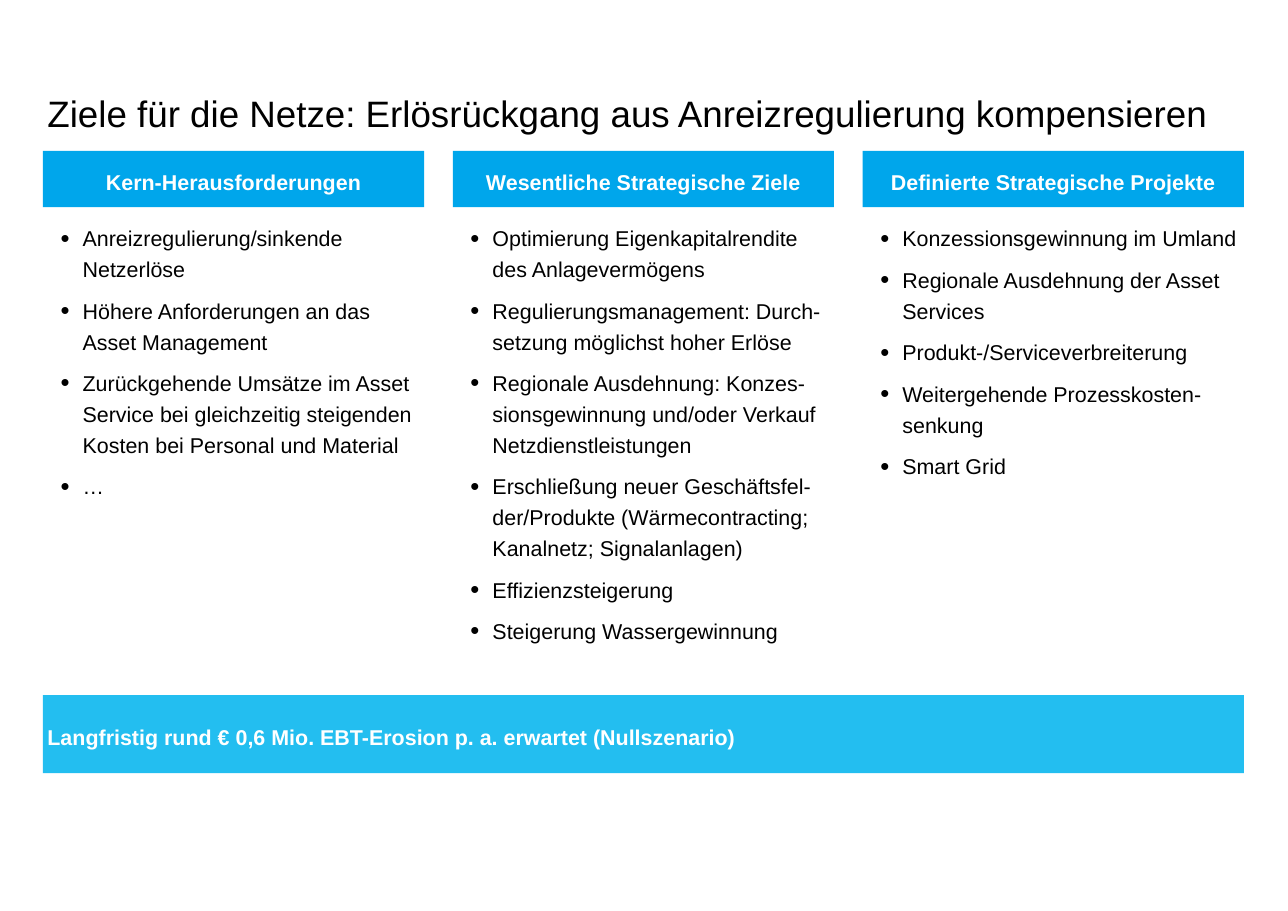
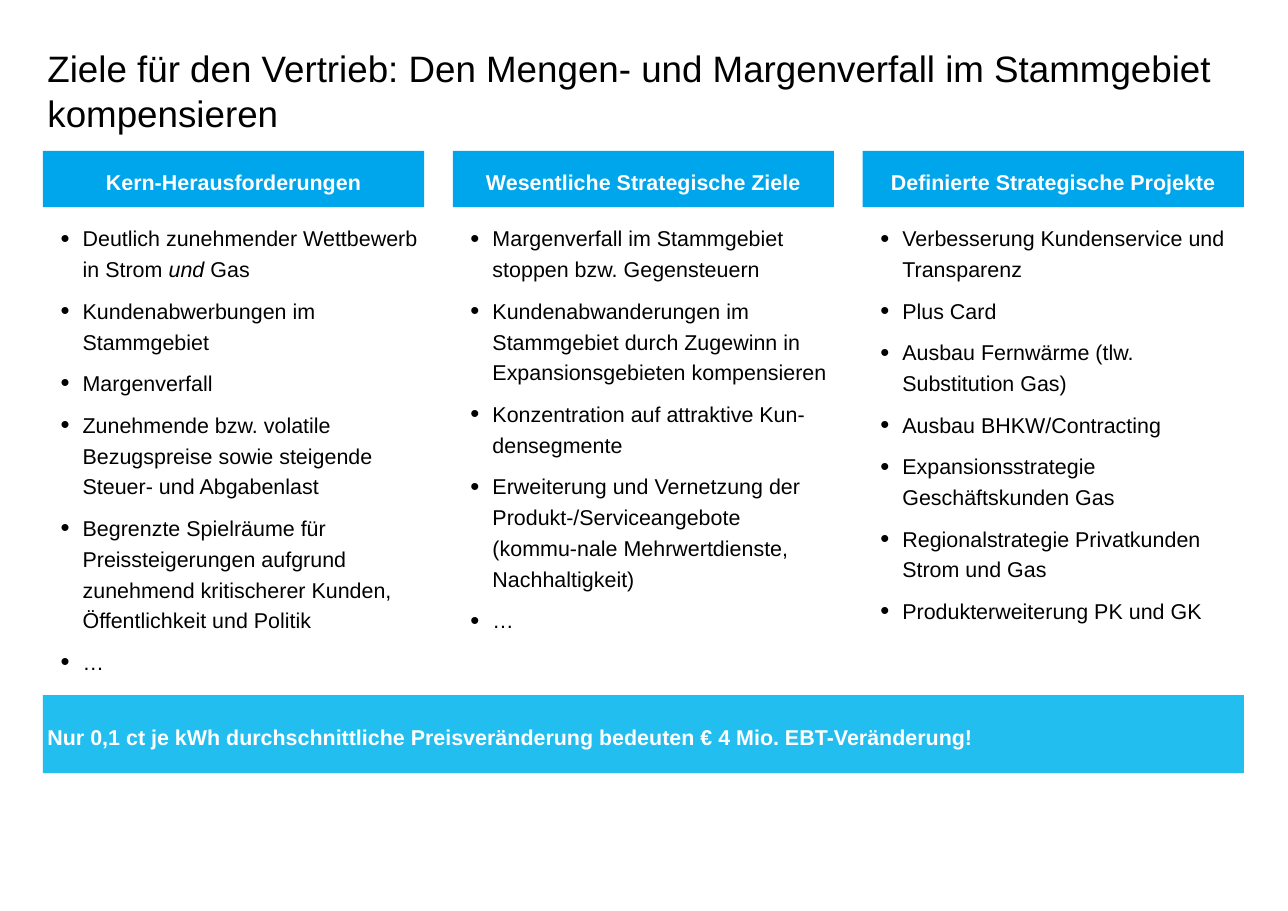
from lxml import etree
from pptx import Presentation
from pptx.dml.color import RGBColor
from pptx.enum import shapes, text
from pptx.oxml import ns
from pptx.util import Inches, Pt

BLUE = RGBColor(0x00, 0xA6, 0xEB)
LIGHT = RGBColor(0x23, 0xBE, 0xF0)
WHITE = RGBColor(0xFF, 0xFF, 0xFF)
BLACK = RGBColor(0x00, 0x00, 0x00)
FONT = "Arial"

LEFT, WIDE = 0.39, 10.9
COL, STEP = 3.46, 3.72
PAD = 0.04

HEADS = [
    "Kern-Herausforderungen",
    "Wesentliche Strategische Ziele",
    "Definierte Strategische Projekte",
]

# Title, three lists, bottom line; asterisks enclose italic words
SLIDES = [
    (
        "Ziele für die Netze: Erlösrückgang aus Anreizregulierung kompensieren",
        [
            [
                "Anreizregulierung/sinkende Netzerlöse",
                "Höhere Anforderungen an das Asset Management",
                "Zurückgehende Umsätze im Asset Service bei gleichzeitig "
                "steigenden Kosten bei Personal und Material",
                "…",
            ],
            [
                "Optimierung Eigenkapitalrendite des Anlagevermögens",
                "Regulierungsmanagement: Durch-setzung möglichst hoher Erlöse",
                "Regionale Ausdehnung: Konzes-sionsgewinnung und/oder Verkauf "
                "Netzdienstleistungen",
                "Erschließung neuer Geschäftsfel-der/Produkte "
                "(Wärmecontracting; Kanalnetz; Signalanlagen)",
                "Effizienzsteigerung",
                "Steigerung Wassergewinnung",
            ],
            [
                "Konzessionsgewinnung im Umland",
                "Regionale Ausdehnung der Asset Services",
                "Produkt-/Serviceverbreiterung",
                "Weitergehende Prozesskosten-senkung",
                "Smart Grid",
            ],
        ],
        "Langfristig rund € 0,6 Mio. EBT-Erosion p. a. erwartet (Nullszenario)",
    ),
    (
        "Ziele für den Vertrieb: Den Mengen- und Margenverfall im Stammgebiet "
        "kompensieren",
        [
            [
                "Deutlich zunehmender Wettbewerb in Strom *und* Gas",
                "Kundenabwerbungen im Stammgebiet",
                "Margenverfall",
                "Zunehmende bzw. volatile Bezugspreise sowie steigende "
                "Steuer- und Abgabenlast",
                "Begrenzte Spielräume für Preissteigerungen aufgrund zunehmend "
                "kritischerer Kunden, Öffentlichkeit und Politik",
                "…",
            ],
            [
                "Margenverfall im Stammgebiet stoppen bzw. Gegensteuern",
                "Kundenabwanderungen im Stammgebiet durch Zugewinn in "
                "Expansionsgebieten kompensieren",
                "Konzentration auf attraktive Kun-densegmente",
                "Erweiterung und Vernetzung der Produkt-/Serviceangebote "
                "(kommu-nale Mehrwertdienste, Nachhaltigkeit)",
                "…",
            ],
            [
                "Verbesserung Kundenservice und Transparenz",
                "Plus Card",
                "Ausbau Fernwärme (tlw. Substitution Gas)",
                "Ausbau BHKW/Contracting",
                "Expansionsstrategie Geschäftskunden Gas",
                "Regionalstrategie Privatkunden Strom und Gas",
                "Produkterweiterung PK und GK",
            ],
        ],
        "Nur 0,1 ct je kWh durchschnittliche Preisveränderung bedeuten "
        "€ 4 Mio. EBT-Veränderung!",
    ),
]


def fill_box(box, place, lines, size, color, anchor, bold=False,
             align=text.PP_ALIGN.LEFT, lead=1.2, inset=PAD):
    """Place a shape and write its paragraphs in one style."""
    box.left, box.top, box.width, box.height = map(Inches, place)
    frame = box.text_frame
    frame.word_wrap = True
    frame.auto_size = text.MSO_AUTO_SIZE.NONE
    frame.vertical_anchor = anchor
    frame.margin_left = Inches(inset)
    frame.margin_top = frame.margin_right = frame.margin_bottom = Inches(PAD)
    for n, line in enumerate(lines):
        para = frame.add_paragraph() if n else frame.paragraphs[0]
        para.alignment = align
        para.line_spacing = lead
        para.space_before = Pt(7 if n else 0)
        for k, part in enumerate(line.split("*")):
            run = para.add_run()
            run.text = part
            font = run.font
            font.name, font.size, font.bold = FONT, Pt(size), bold
            font.color.rgb = color
            if k % 2:
                font.italic = True


def add_bullets(box):
    for para in box.text_frame.paragraphs:
        props = para._p.get_or_add_pPr()
        props.set("marL", str(Inches(0.3)))
        props.set("indent", str(Inches(-0.2)))
        for tag, key, val in (("a:buSzPct", "val", "120000"),
                              ("a:buFont", "typeface", FONT),
                              ("a:buChar", "char", "•")):
            etree.SubElement(props, ns.qn(tag)).set(key, val)


prs = Presentation()
prs.slide_width, prs.slide_height = Inches(11.69), Inches(8.27)
layout = prs.slide_layouts.get_by_name("Comparison")
MID, TOP = text.MSO_ANCHOR.MIDDLE, text.MSO_ANCHOR.TOP

for title, lists, note in SLIDES:
    slide = prs.slides.add_slide(layout)
    head, band, *bodies = slide.placeholders
    fill_box(head, (LEFT, 0.39, WIDE, 0.87), [title], 24, BLACK,
             text.MSO_ANCHOR.BOTTOM, lead=1.0)

    for col, (label, items, body) in enumerate(zip(HEADS, lists, bodies)):
        left = LEFT + col * STEP
        bar = slide.shapes.add_shape(shapes.MSO_SHAPE.RECTANGLE, 0, 0, 0, 0)
        bar.shadow.inherit = False
        bar.fill.solid()
        bar.fill.fore_color.rgb = BLUE
        bar.line.fill.background()
        fill_box(bar, (left, 1.37, COL, 0.51), [label], 14, WHITE, MID,
                 bold=True, align=text.PP_ALIGN.CENTER)
        fill_box(body, (left, 1.96, COL, 4.13), items, 14, BLACK, TOP,
                 inset=0.06)
        add_bullets(body)

    band.fill.solid()
    band.fill.fore_color.rgb = LIGHT
    fill_box(band, (LEFT, 6.31, WIDE, 0.71), [note], 14, WHITE, MID, bold=True)

prs.save("out.pptx")
